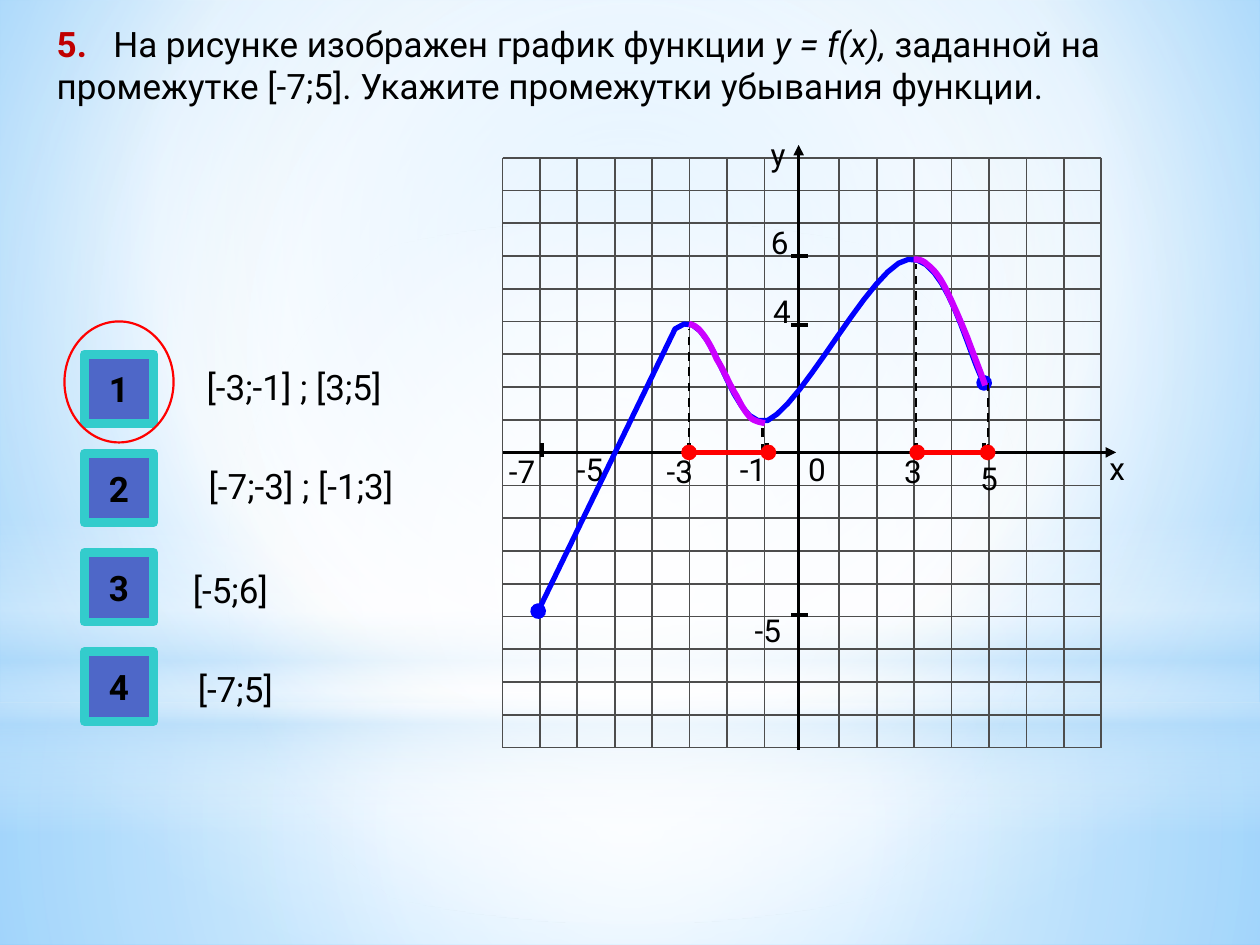
from collections import namedtuple

from lxml.etree import SubElement
from pptx import Presentation
from pptx.dml.color import RGBColor
from pptx.enum.dml import MSO_LINE
from pptx.enum.shapes import MSO_CONNECTOR, MSO_SHAPE
from pptx.enum.text import MSO_ANCHOR, MSO_AUTO_SIZE, PP_ALIGN
from pptx.oxml.ns import qn
from pptx.util import Cm, Pt

Box = namedtuple("Box", "left top width height")
BLACK, BLUE, RED, PURPLE, GREY = "000000", "0000FF", "FF0000", "CC00FF", "4D4D4D"
BODY = {"name": "Roboto", "size": Pt(20), "bold": False, "italic": False}
LABEL = {**BODY, "size": Pt(18)}
CENTRE = (50, 50, 50, 50)


def paint(fill, colour):
    fill.solid()
    fill.fore_color.rgb = RGBColor.from_string(colour)


def write(para, text, style, colour=BLACK):
    span = para.add_run()
    span.text = text
    for name, value in style.items():
        setattr(span.font, name, value)
    paint(span.font.fill, colour)


def add_label(page, box, text, style):
    frame = page.shapes.add_textbox(*map(Cm, box)).text_frame
    frame.word_wrap = True
    para = frame.paragraphs[0]
    para.alignment = PP_ALIGN.CENTER
    write(para, text, style)


def format_line(line, colour, width, dash=None, head=None, tail=None):
    paint(line.fill, colour)
    line.width = Pt(width)
    if dash:
        line.dash_style = dash
    for tag, kind in (("a:headEnd", head), ("a:tailEnd", tail)):
        if kind:
            SubElement(line.fill._xPr, qn(tag), type=kind)


def add_line(page, box, start, end, *look, **ends):
    """Straight line between two points given relative to the box."""
    points = [Cm(edge + value) for point in (start, end)
              for edge, value in zip(box, point)]
    line = page.shapes.add_connector(MSO_CONNECTOR.STRAIGHT, *points)
    format_line(line.line, *look, **ends)
    SubElement(line.element.spPr, qn("a:effectLst"))


def bezier(start, first, second, end, steps=12):
    for step in range(1, steps + 1):
        t = step / steps
        weights = ((1 - t) ** 3, 3 * t * (1 - t) ** 2, 3 * t * t * (1 - t), t ** 3)
        yield tuple(sum(w * value for w, value in zip(weights, values))
                    for values in zip(start, first, second, end))


def add_curve(page, box, lead, knots, *look, **ends):
    """Lead points, then cubic segments of three knots each."""
    points = list(lead)
    for index in range(0, len(knots), 3):
        points += bezier(points[-1], *knots[index:index + 3])
    places = [(Cm(box.left + x), Cm(box.top + y)) for x, y in points]
    builder = page.shapes.build_freeform(*places[0])
    builder.add_line_segments(places[1:], close=False)
    curve = builder.convert_to_shape()
    curve.fill.background()
    curve.shadow.inherit = False
    format_line(curve.line, *look, **ends)


def set_gradient(fill, properties, stops, centre=None, angle=90):
    """Replace the solid fill by a gradient; stops are position, colour, opacity."""
    paint(fill, "FFFFFF")
    solid = properties.find(qn("a:solidFill"))
    gradient = SubElement(properties, qn("a:gradFill"), rotWithShape="1")
    properties.replace(solid, gradient)
    stop_list = SubElement(gradient, qn("a:gsLst"))
    for position, colour, opacity in stops:
        stop = SubElement(stop_list, qn("a:gs"), pos=str(position * 1000))
        tint = SubElement(stop, qn("a:srgbClr"), val=colour)
        SubElement(tint, qn("a:alpha"), val=str(opacity * 1000))
    if centre:
        route = SubElement(gradient, qn("a:path"), path="circle")
        SubElement(route, qn("a:fillToRect"),
                   **{side: str(value * 1000) for side, value in zip("ltrb", centre)})
    else:
        SubElement(gradient, qn("a:lin"), ang=str(angle * 60000), scaled="0")


def add_backdrop(page, box):
    fill = page.background.fill
    fill.solid()
    set_gradient(fill, page.element.cSld.find(qn("p:bg")).find(qn("p:bgPr")),
                 [(0, "9ED5FF", 100), (60, "FFFFFF", 100), (100, "5BB9FF", 100)],
                 (20, 10, 20, 60))
    # Veils: preset, top, height, stops, centre
    veils = [
        (MSO_SHAPE.RECTANGLE, 14.17, 4.88,
         [(0, "FFFFFF", 91), (37, "FFFFFF", 76), (100, "B4DCFA", 79)], CENTRE),
        (MSO_SHAPE.RECTANGLE, 0, 14.17,
         [(0, "FFFFFF", 89), (48, "FFFFFF", 62), (100, "B4DCFA", 79)], CENTRE),
        (MSO_SHAPE.RECTANGLE, 10.46, 6.35,
         [(0, "FFFFFF", 0), (29, "FFFFFF", 30), (45, "B4DCFA", 40),
          (55, "FFFFFF", 26), (65, "B4DCFA", 60), (100, "FFFFFF", 0)], None),
        (MSO_SHAPE.OVAL, 4.45, 14.17,
         [(0, "FFFFFF", 100), (56, "FFFFFF", 0)], CENTRE),
    ]
    for preset, top, height, stops, centre in veils:
        veil = page.shapes.add_shape(preset, Cm(box.left), Cm(box.top + top),
                                     Cm(box.width), Cm(height))
        set_gradient(veil.fill, veil.element.spPr, stops, centre)
        veil.line.fill.background()
        veil.shadow.inherit = False


def add_question(page, box):
    title = page.shapes.title
    title.left, title.top, title.width, title.height = map(Cm, box)
    title.element.getparent().append(title.element)  # in front of the veils
    frame = title.text_frame
    frame.word_wrap, frame.auto_size = True, MSO_AUTO_SIZE.NONE
    frame.vertical_anchor = MSO_ANCHOR.TOP
    para = frame.paragraphs[0]
    para.alignment = PP_ALIGN.LEFT
    tabs = SubElement(para._p.get_or_add_pPr(), qn("a:tabLst"))
    SubElement(tabs, qn("a:tab"), pos=str(Cm(1.14)), algn="l")
    write(para, "5.\t", {**BODY, "bold": True}, "C00000")
    write(para, "На рисунке изображен график функции ", BODY)
    write(para, "y = f(x), ", {**BODY, "italic": True})
    write(para, "заданной на промежутке [-7;5]. Укажите промежутки "
                "убывания функции.", BODY)


def add_graph(page, box):
    axis_x, axis_y = 5.97, 5.94
    # Grid, with the axes in place of its middle lines
    columns, rows = 16, 18
    for column in range(columns + 1):
        x = box.width * column / columns
        if column != columns // 2:
            add_line(page, box, (x, 0), (x, box.height), GREY, 1)
    for row in range(rows + 1):
        y = box.height * row / rows
        if row != rows // 2:
            add_line(page, box, (0, y), (box.width, y), GREY, 1)
    add_line(page, box, (axis_x, 11.93), (axis_x, -0.26), BLACK, 2, tail="triangle")
    add_line(page, box, (0, axis_y), (12.37, axis_y), BLACK, 2, tail="triangle")

    # Labels: text, left, top, width
    for text, left, top, width in [
            ("0", 5.54, 5.76, 1.6), ("-1", 4.35, 5.76, 1.4), ("-3", 2.98, 5.81, 1.19),
            ("-5", 1.17, 5.76, 1.19), ("-7", -0.2, 5.81, 1.19), ("-5", 4.55, 9.01, 1.6),
            ("3", 7.78, 5.81, 0.99), ("5", 9.38, 5.94, 0.61), ("4", 5.14, 2.59, 0.99),
            ("6", 5.16, 1.19, 0.81), ("х", 11.69, 5.74, 1.4), ("у", 4.96, -0.59, 1.19)]:
        add_label(page, Box(box.left + left, box.top + top, width, 1.02), text, LABEL)

    # Function, drop lines and ticks
    add_curve(page, box, [(0.72, 9.14), (3.48, 3.45)],
              [(4.25, 2.79), (4.55, 5.53), (5.34, 5.3), (6.08, 4.97), (7.45, 2.15),
               (8.18, 2.05), (8.95, 1.93), (9.4, 4.03), (9.71, 4.54)],
              BLUE, 3, head="oval", tail="oval")
    for x, y in [(9.78, 4.54), (5.24, 5.35), (8.34, 2.15), (3.76, 3.45)]:
        add_line(page, box, (x, axis_y), (x, y), BLACK, 1.25, MSO_LINE.DASH)
    for x in (0.79, 3.76, 5.34, 8.34, 9.71):
        add_line(page, box, (x, 6.04), (x, 5.76), BLACK, 2.25)
    for y in (1.98, 3.37, 9.22):
        add_line(page, box, (5.82, y), (6.15, y), BLACK, 2.25)

    # Decreasing intervals on the axis and on the curve
    for start, end in [(3.76, 5.36), (8.36, 9.78)]:
        add_line(page, box, (start, axis_y), (end, axis_y), RED, 3,
                 head="oval", tail="oval")
    add_curve(page, box, [(3.76, 3.35)],
              [(3.84, 3.37), (3.92, 3.4), (4.02, 3.53), (4.12, 3.65), (4.22, 3.83),
               (4.32, 4.06), (4.45, 4.26), (4.6, 4.62), (4.73, 4.82), (4.83, 5.02),
               (4.91, 5.15), (5.01, 5.25), (5.11, 5.33), (5.29, 5.35), (5.29, 5.35)],
              PURPLE, 3.5)
    add_curve(page, box, [(8.29, 2.05)],
              [(8.36, 2.05), (8.46, 2.05), (8.56, 2.15), (8.67, 2.23), (8.79, 2.36),
               (8.92, 2.61), (9.05, 2.87), (9.25, 3.32), (9.38, 3.65), (9.5, 3.98),
               (9.63, 4.29), (9.73, 4.59)], PURPLE, 3.5)


def add_answers(page, box):
    pitch, size = 2, box.width
    # Answers: text, left, drop below the button's top, width
    answers = [("[-3;-1] ; [3;5]", 1.04, 0.1, 6.38), ("[-7;-3] ; [-1;3]", 1.17, 0.1, 6.4),
               ("[-5;6]", 1.04, 0.2, 3.81), ("[-7;5]", 1.65, 0.2, 2.79)]
    for index, (text, left, drop, width) in enumerate(answers):
        top = box.top + index * pitch
        button = page.shapes.add_shape(MSO_SHAPE.ACTION_BUTTON_CUSTOM, Cm(box.left),
                                       Cm(top), Cm(size), Cm(size))
        paint(button.fill, "4E67C8")
        format_line(button.line, "33CCCC", 5)
        button.shadow.inherit = False
        frame = button.text_frame
        frame.word_wrap, frame.vertical_anchor = False, MSO_ANCHOR.MIDDLE
        frame.paragraphs[0].alignment = PP_ALIGN.CENTER
        write(frame.paragraphs[0], str(index + 1), {**BODY, "bold": True})
        add_label(page, Box(box.left + left, top + drop, width, 1.12), text, BODY)
    # Ring around the right answer
    ring = page.shapes.add_shape(MSO_SHAPE.OVAL, Cm(box.left - 0.4), Cm(box.top - 0.66),
                                 Cm(2.2), Cm(2.44))
    ring.fill.background()
    ring.shadow.inherit = False
    format_line(ring.line, RED, 1.25)


def main():
    deck = Presentation()
    deck.slide_width, deck.slide_height = Cm(25.4), Cm(19.05)
    page = deck.slides.add_slide(deck.slide_layouts.get_by_name("Title Only"))
    add_backdrop(page, Box(0, 0, 25.4, 19.05))
    add_graph(page, Box(10.13, 3.18, 12.07, 11.89))
    add_answers(page, Box(1.7, 7.14, 1.4, 7.4))
    add_question(page, Box(0.89, 0.33, 22.71, 1.96))
    deck.save("out.pptx")


if __name__ == "__main__":
    main()
